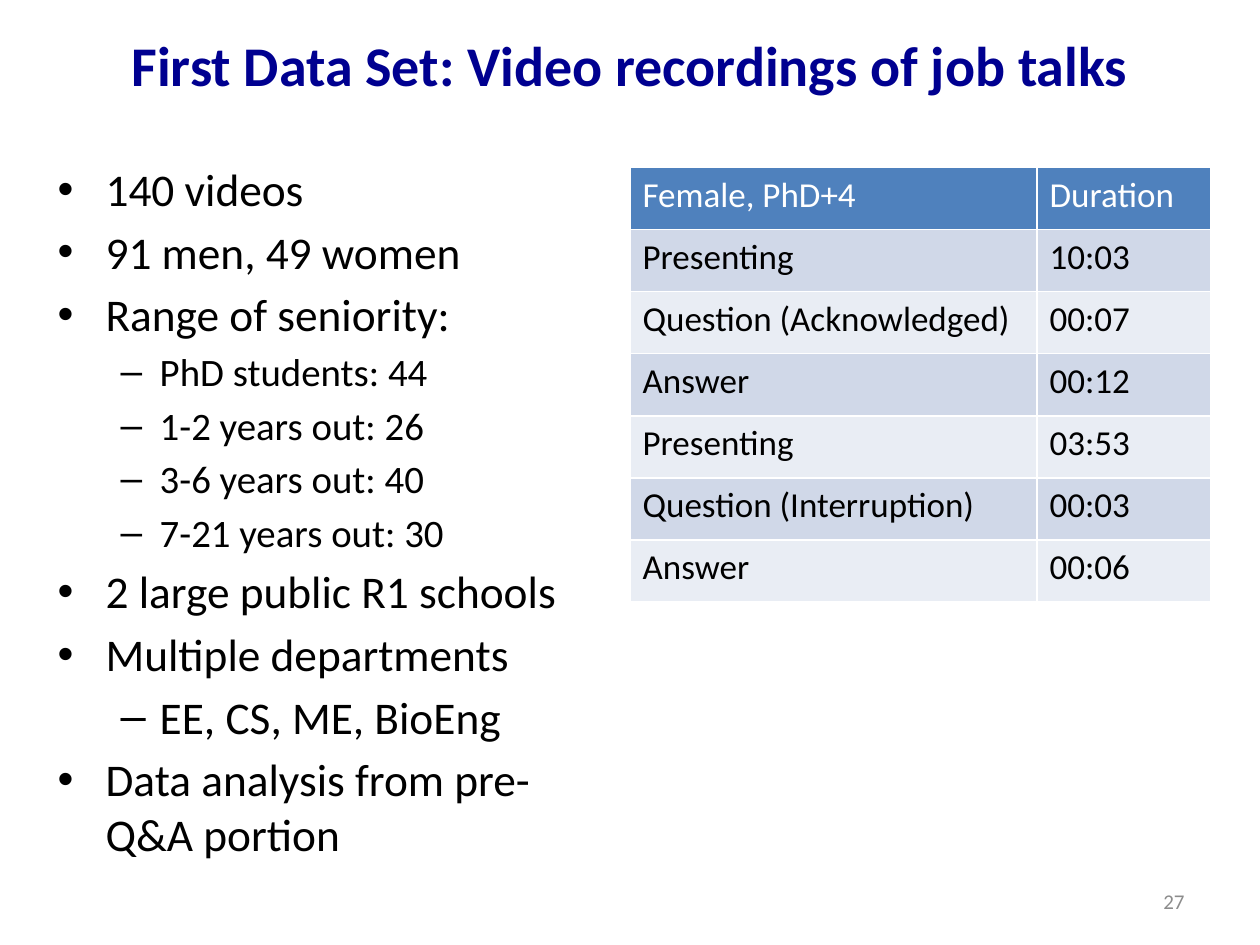
import pptx
import pptx.dml.color
import pptx.enum.text
import pptx.oxml
import pptx.oxml.ns
import pptx.util
from pptx.util import Inches

FONT = "Calibri"
ALIGN = pptx.enum.text.PP_ALIGN
ANCHOR = pptx.enum.text.MSO_ANCHOR

BULLETS = [
    (0, 25.9, "140 videos"),
    (0, 25.9, "91 men, 49 women"),
    (0, 25.9, "Range of seniority:"),
    (1, 22.2, "PhD students: 44"),
    (1, 22.2, "1-2 years out: 26"),
    (1, 22.2, "3-6 years out: 40"),
    (1, 22.2, "7-21 years out: 30"),
    (0, 25.9, "2 large public R1 schools"),
    (0, 25.9, "Multiple departments"),
    (1, 25.9, "EE, CS, ME, BioEng"),
    (0, 25.9, "Data analysis from pre-Q&A portion"),
]
BULLET_LEVELS = [("•", 0.38, 0.38), ("–", 0.81, 0.31)]

TALK_ROWS = [
    ("Female, PhD+4", "Duration"),
    ("Presenting", "10:03"),
    ("Question (Acknowledged)", "00:07"),
    ("Answer", "00:12"),
    ("Presenting", "03:53"),
    ("Question (Interruption)", "00:03"),
    ("Answer", "00:06"),
]
COLUMN_WIDTHS = [3.23, 1.38]
ROW_HEIGHT = 3.45 / len(TALK_ROWS)
HEADER_FILL = "4F81BD"
BAND_FILLS = ["E9EDF4", "D0D8E8"]


def color(value):
    return pptx.dml.color.RGBColor.from_string(value)


def format_paragraph(paragraph, size, text_color, bold=False, alignment=ALIGN.LEFT):
    paragraph.alignment = alignment
    paragraph.font.name = FONT
    paragraph.font.size = pptx.util.Pt(size)
    paragraph.font.bold = bold
    paragraph.font.color.rgb = color(text_color)


def set_title(slide, text):
    title = slide.shapes.title
    title.left, title.top = Inches(0.5), Inches(-0.12)
    title.width, title.height = Inches(9), Inches(1.25)
    title.text_frame.text = text
    title.text_frame.vertical_anchor = ANCHOR.MIDDLE
    format_paragraph(title.text_frame.paragraphs[0], 32, "000090", True, ALIGN.CENTER)


def add_text_frame(slide, left, top, width, height):
    box = slide.shapes.add_textbox(Inches(left), Inches(top), Inches(width), Inches(height))
    box.text_frame.word_wrap = True
    return box.text_frame


def set_bullet(paragraph, level):
    character, indent, hanging = BULLET_LEVELS[level]
    paragraph.level = level
    properties = paragraph._p.get_or_add_pPr()
    properties.set("marL", str(Inches(indent)))
    properties.set("indent", str(-Inches(hanging)))
    namespace = pptx.oxml.ns.nsdecls("a")
    font = pptx.oxml.parse_xml(f'<a:buFont {namespace} typeface="Arial"/>')
    bullet = pptx.oxml.parse_xml(f'<a:buChar {namespace} char="{character}"/>')
    default_run = properties.find(pptx.oxml.ns.qn("a:defRPr"))
    default_run.addprevious(font)
    default_run.addprevious(bullet)


def add_bullets(slide):
    text_frame = add_text_frame(slide, 0.36, 1.23, 4.2, 5.85)
    for index, (level, size, text) in enumerate(BULLETS):
        paragraph = text_frame.add_paragraph() if index else text_frame.paragraphs[0]
        paragraph.text = text
        format_paragraph(paragraph, size, "000000")
        paragraph.space_before = pptx.util.Pt(round(size * 0.18, 1))
        set_bullet(paragraph, level)


def add_talk_table(slide):
    shape = slide.shapes.add_table(
        len(TALK_ROWS), len(COLUMN_WIDTHS),
        Inches(5), Inches(1.33), Inches(sum(COLUMN_WIDTHS)), Inches(3.45))
    table = shape.table
    for column, width in zip(table.columns, COLUMN_WIDTHS):
        column.width = Inches(width)
    for row_index, values in enumerate(TALK_ROWS):
        table.rows[row_index].height = Inches(ROW_HEIGHT)
        fill = BAND_FILLS[row_index % 2] if row_index else HEADER_FILL
        text_color = "000000" if row_index else "FFFFFF"
        for column_index, value in enumerate(values):
            cell = table.cell(row_index, column_index)
            cell.text = value
            cell.fill.solid()
            cell.fill.fore_color.rgb = color(fill)
            format_paragraph(cell.text_frame.paragraphs[0], 20, text_color)


def add_slide_number(slide, number):
    text_frame = add_text_frame(slide, 7.17, 6.95, 2.33, 0.4)
    text_frame.vertical_anchor = ANCHOR.MIDDLE
    text_frame.text = number
    format_paragraph(text_frame.paragraphs[0], 12, "8C8C8C", alignment=ALIGN.RIGHT)


def main():
    presentation = pptx.Presentation()
    presentation.slide_width = Inches(10)
    presentation.slide_height = Inches(7.5)
    slide = presentation.slides.add_slide(presentation.slide_layouts[5])
    set_title(slide, "First Data Set: Video recordings of job talks")
    add_bullets(slide)
    add_slide_number(slide, "27")
    add_talk_table(slide)
    presentation.save("out.pptx")


if __name__ == "__main__":
    main()
